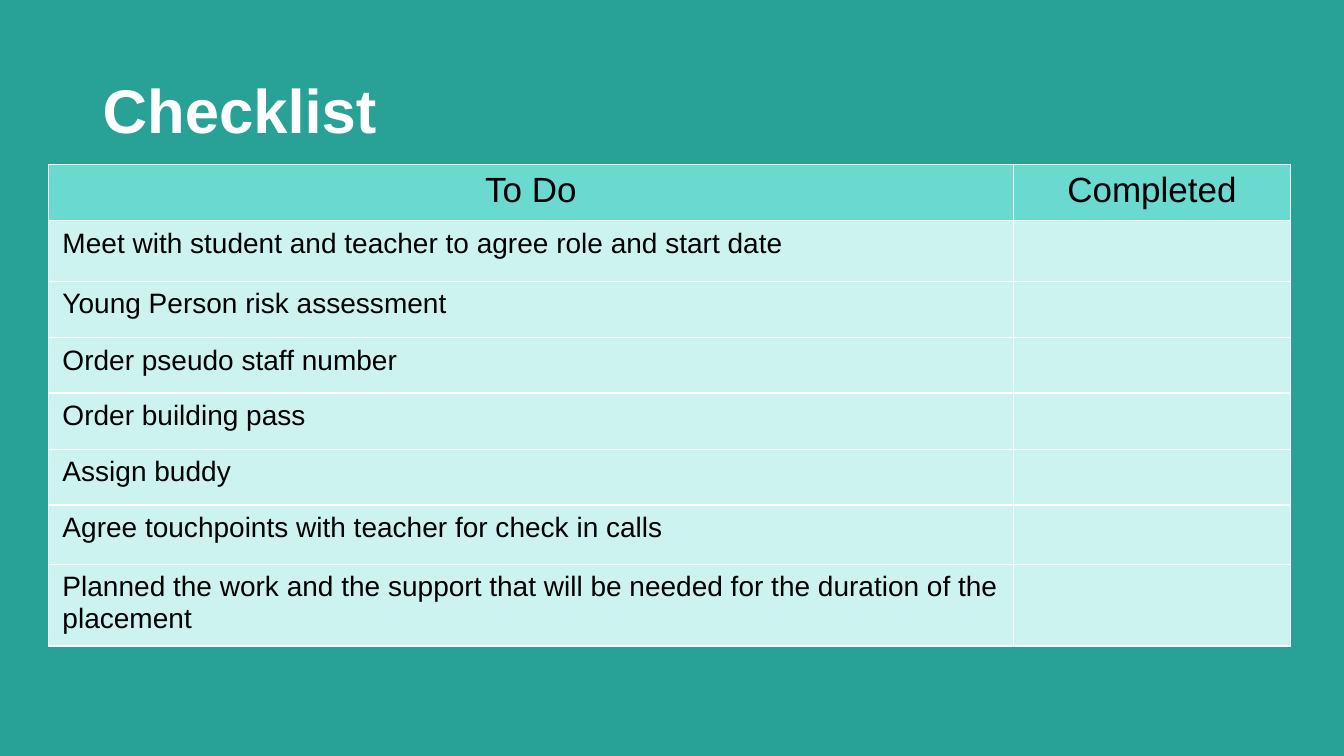
from dataclasses import dataclass

from lxml.etree import SubElement
from pptx import Presentation
from pptx.dml.color import RGBColor
from pptx.enum.shapes import MSO_SHAPE
from pptx.enum.text import MSO_ANCHOR, PP_ALIGN
from pptx.oxml.ns import qn
from pptx.util import Inches, Pt


@dataclass(frozen=True)
class Theme:
    font: str = "Arial"
    teal: str = "28A197"
    header_fill: str = "6ADAD1"
    row_fill: str = "CDF3F0"
    white: str = "FFFFFF"
    black: str = "000000"
    title_size: int = 44
    header_size: int = 25
    row_size: int = 20
    border_width: int = 1


THEME = Theme()
HEADINGS = ("To Do", "Completed")
HEADING_HEIGHT = 0.56
TASKS = (
    ("Meet with student and teacher to agree role and start date", 0.6),
    ("Young Person risk assessment", 0.56),
    ("Order pseudo staff number", 0.55),
    ("Order building pass", 0.56),
    ("Assign buddy", 0.55),
    ("Agree touchpoints with teacher for check in calls", 0.59),
    ("Planned the work and the support that will be needed for the duration of the placement", 0.81),
)


def style(paragraph, size, color, bold=False):
    font = paragraph.font
    font.name = THEME.font
    font.size = Pt(size)
    font.bold = bold
    font.color.rgb = RGBColor.from_string(color)


def add_backdrop(slide, left, top, width, height):
    backdrop = slide.shapes.add_shape(
        MSO_SHAPE.RECTANGLE, Inches(left), Inches(top), Inches(width), Inches(height))
    backdrop.shadow.inherit = False
    backdrop.fill.solid()
    backdrop.fill.fore_color.rgb = RGBColor.from_string(THEME.teal)
    backdrop.line.fill.background()


def add_title(slide, left, top, width, height):
    title = slide.shapes.add_textbox(
        Inches(left), Inches(top), Inches(width), Inches(height)).text_frame
    title.word_wrap = True
    title.vertical_anchor = MSO_ANCHOR.MIDDLE
    title.text = "Checklist"
    heading = title.paragraphs[0]
    heading.line_spacing = 0.9
    style(heading, THEME.title_size, THEME.white, bold=True)


def format_cell(cell, text, size, fill, align):
    cell.margin_left = cell.margin_right = Inches(0.14)
    cell.margin_top = cell.margin_bottom = Inches(0.07)
    cell.text = text
    paragraph = cell.text_frame.paragraphs[0]
    paragraph.alignment = align
    style(paragraph, size, THEME.black)
    properties = cell._tc.get_or_add_tcPr()
    for side in "LRTB":
        border = SubElement(properties, qn(f"a:ln{side}"), w=str(Pt(THEME.border_width)))
        SubElement(SubElement(border, qn("a:solidFill")), qn("a:srgbClr"), val=THEME.white)
    cell.fill.solid()
    cell.fill.fore_color.rgb = RGBColor.from_string(fill)


def add_checklist(slide, left, top, width, completed_width):
    heights = [HEADING_HEIGHT] + [height for _, height in TASKS]
    checklist = slide.shapes.add_table(
        len(heights), len(HEADINGS), Inches(left), Inches(top),
        Inches(width), Inches(sum(heights))).table
    checklist.first_row = False
    checklist.horz_banding = False
    for column, column_width in zip(
            checklist.columns, (width - completed_width, completed_width)):
        column.width = Inches(column_width)
    for row, height in zip(checklist.rows, heights):
        row.height = Inches(height)
    for column, heading in enumerate(HEADINGS):
        format_cell(checklist.cell(0, column), heading, THEME.header_size,
                    THEME.header_fill, PP_ALIGN.CENTER)
    for row, (task, _) in enumerate(TASKS, start=1):
        for column, text in enumerate((task, "")):
            format_cell(checklist.cell(row, column), text, THEME.row_size,
                        THEME.row_fill, PP_ALIGN.LEFT)


def main():
    presentation = Presentation()
    presentation.slide_width = Inches(13.33)
    presentation.slide_height = Inches(7.5)
    slide = presentation.slides.add_slide(presentation.slide_layouts[6])
    add_backdrop(slide, 0, 0, 13.33, 7.5)
    add_checklist(slide, 0.48, 1.63, 12.32, 2.75)
    add_title(slide, 0.92, 0.4, 11, 1.45)
    presentation.save("out.pptx")


if __name__ == "__main__":
    main()
